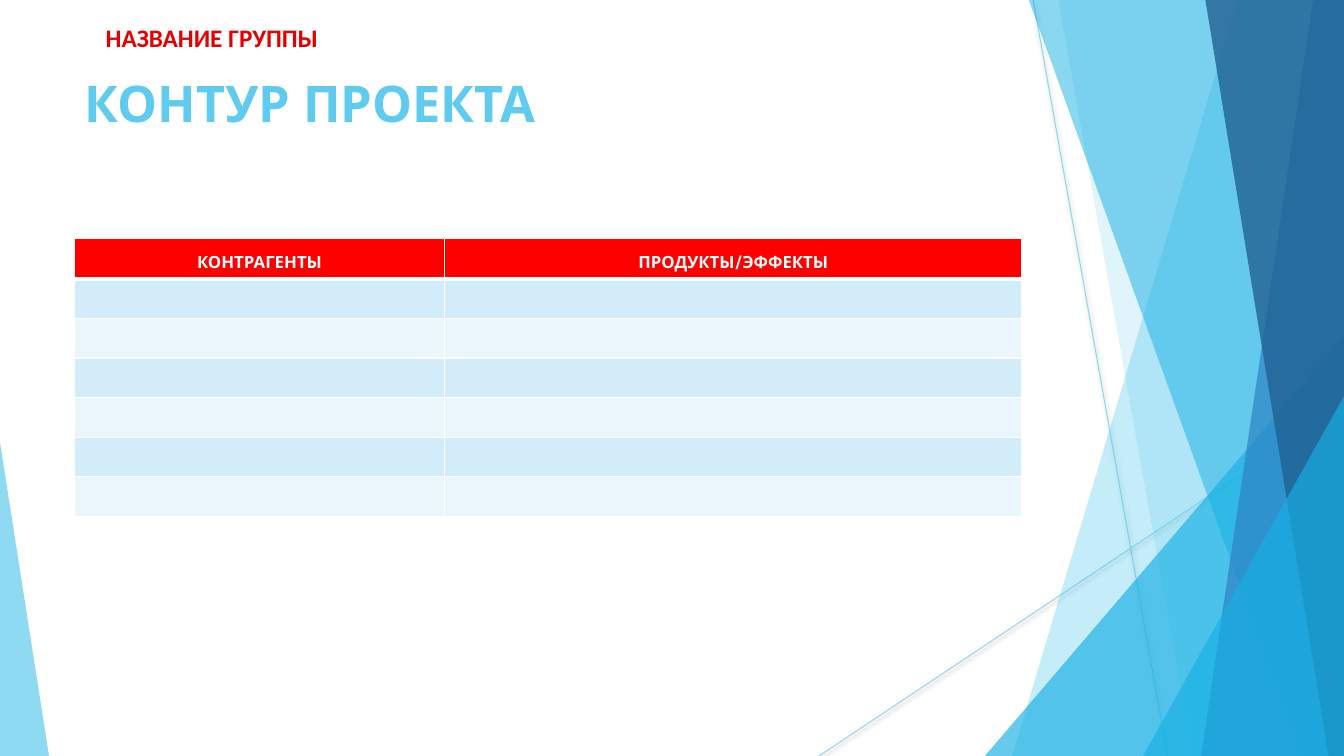
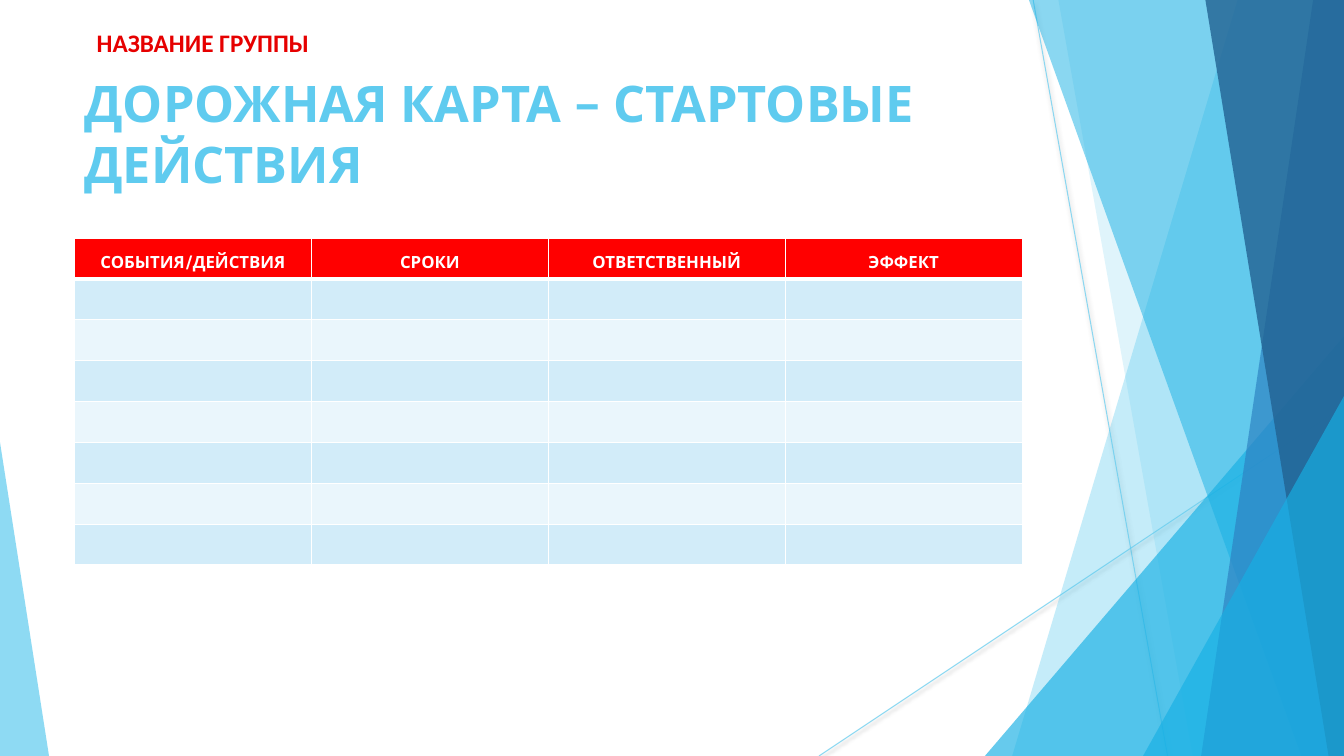
from pptx import Presentation
from pptx.dml.color import RGBColor
from pptx.enum.shapes import MSO_CONNECTOR as Connector, MSO_SHAPE as Preset
from pptx.enum.text import MSO_ANCHOR as Anchor, PP_ALIGN as Align
from pptx.oxml import parse_xml
from pptx.oxml.ns import nsdecls, qn
from pptx.util import Pt

WIDTH, HEIGHT = 960, 540
SKY, CYAN, BLUE, NAVY = "5FCBEF", "17B0E4", "2E83C3", "226292"
WHITE, RED, LABEL_RED = "FFFFFF", "FF0000", "E60000"
STRIPES = ("D2ECF9", "EAF6FC")
TITLE_FONT, LABEL_FONT = "Karla", "Calibri"
LEFT, CONTENT_WIDTH = 53.3, 676.8
TITLE_TOP, TABLE_TOP = 48.2, 170
HEADER_HEIGHT = 29.2


def color(value):
    """Turn a hex string into a colour."""
    return RGBColor.from_string(value)


def set_alpha(shape, percent):
    """Make the colours of a shape translucent."""
    for tint in shape._element.spPr.iter(qn("a:srgbClr")):
        tint.append(parse_xml(f'<a:alpha {nsdecls("a")} val="{percent * 1000}"/>'))


def paint(shape, fill, alpha):
    """Give a shape a translucent fill with no outline or shadow."""
    shape.shadow.inherit = False
    shape.fill.solid()
    shape.fill.fore_color.rgb = color(fill)
    shape.line.fill.background()
    set_alpha(shape, alpha)


def add_ray(page, start, end):
    """Draw a thin line with a soft shadow below it."""
    ray = page.shapes.add_connector(Connector.STRAIGHT, *map(Pt, start + end))
    ray.line.color.rgb = color(SKY)
    ray.line.width = Pt(0.75)
    set_alpha(ray, 70)
    ray._element.spPr.append(parse_xml(
        f'<a:effectLst {nsdecls("a")}><a:outerShdw blurRad="{Pt(3.1)}" dist="{Pt(1.6)}" '
        'dir="5400000" rotWithShape="0"><a:srgbClr val="000000"><a:alpha val="38000"/>'
        '</a:srgbClr></a:outerShdw></a:effectLst>'))


def add_band(page, top_x, bottom_x, fill, alpha):
    """Fill from a slanted edge to the right side of the page."""
    outline = page.shapes.build_freeform(Pt(top_x), Pt(0))
    corners = [(WIDTH, 0), (WIDTH, HEIGHT), (bottom_x, HEIGHT)]
    outline.add_line_segments([(Pt(x), Pt(y)) for x, y in corners], close=True)
    paint(outline.convert_to_shape(), fill, alpha)


def add_wedge(page, left, top, width, apex, fill, alpha):
    """Draw a triangle that stands on the bottom of the page."""
    wedge = page.shapes.add_shape(
        Preset.ISOSCELES_TRIANGLE, Pt(left), Pt(top), Pt(width), Pt(HEIGHT - top))
    wedge.adjustments[0] = apex
    paint(wedge, fill, alpha)


def add_backdrop(page):
    """Draw the facets shared by all pages."""
    add_ray(page, (738, 0), (834, HEIGHT))
    add_ray(page, (WIDTH, 290), (585, HEIGHT))
    add_band(page, 884, 723, SKY, 36)
    add_band(page, 756, 852, SKY, 20)
    add_wedge(page, 703.5, 240, 256.5, 1, CYAN, 66)
    add_band(page, 735, 929.5, CYAN, 50)
    add_band(page, 938, 858, BLUE, 70)
    add_band(page, 861, 949, NAVY, 80)
    add_wedge(page, 816.5, 283, 143.5, 1, CYAN, 66)
    add_wedge(page, 0, 316, 35, 0, SKY, 70)


def add_span(para, text, font, size, tint):
    """Add one bold run to a paragraph."""
    span = para.add_run()
    span.text = text
    span.font.name = font
    span.font.size = Pt(size)
    span.font.bold = True
    span.font.color.rgb = color(tint)


def add_text(page, area, text, font, size, tint, anchor):
    """Add a wrapping text box with one paragraph."""
    box = page.shapes.add_textbox(*map(Pt, area))
    box.text_frame.word_wrap = True
    box.text_frame.vertical_anchor = anchor
    add_span(box.text_frame.paragraphs[0], text, font, size, tint)


def style_cell(cell, fill, top_width, bottom_width):
    """Fill a cell and give it white borders."""
    cell.fill.solid()
    cell.fill.fore_color.rgb = color(fill)
    widths = {"lnL": 1, "lnR": 1, "lnT": top_width, "lnB": bottom_width}
    for index, (side, width) in enumerate(widths.items()):
        cell._tc.get_or_add_tcPr().insert(index, parse_xml(
            f'<a:{side} {nsdecls("a")} w="{Pt(width)}"><a:solidFill>'
            f'<a:srgbClr val="{WHITE}"/></a:solidFill></a:{side}>'))


def add_grid(page, headers, widths, body_rows, row_height):
    """Add a table with a red header and empty striped rows."""
    height = HEADER_HEIGHT + body_rows * row_height
    table = page.shapes.add_table(
        body_rows + 1, len(headers), Pt(LEFT), Pt(TABLE_TOP),
        Pt(CONTENT_WIDTH), Pt(height)).table
    for column, width in zip(table.columns, widths):
        column.width = Pt(width)
    for index, row in enumerate(table.rows):
        row.height = Pt(row_height if index else HEADER_HEIGHT)
        for cell, header in zip(row.cells, headers):
            if index:
                style_cell(cell, STRIPES[(index - 1) % 2], 3 if index == 1 else 1, 1)
                cell.margin_top = cell.margin_bottom = Pt(3)
            else:
                style_cell(cell, RED, 1, 3)
                para = cell.text_frame.paragraphs[0]
                para.alignment = Align.CENTER
                para.line_spacing = 1.5
                add_span(para, header, TITLE_FONT, 12, WHITE)


def add_page(deck, title, label_left, label_top):
    """Add a page with its backdrop, title and group label."""
    page = deck.slides.add_slide(deck.slide_layouts[6])
    add_backdrop(page)
    add_text(page, (LEFT, TITLE_TOP, CONTENT_WIDTH, 103.7), title,
             TITLE_FONT, 36, SKY, Anchor.TOP)
    add_text(page, (label_left, label_top, 515, 28), "НАЗВАНИЕ ГРУППЫ",
             LABEL_FONT, 18, LABEL_RED, Anchor.MIDDLE)
    return page


def main():
    """Build and save the deck."""
    deck = Presentation()
    deck.slide_width, deck.slide_height = Pt(WIDTH), Pt(HEIGHT)

    page = add_page(deck, "КОНТУР ПРОЕКТА", 68.4, 13)
    add_grid(page, ["КОНТРАГЕНТЫ", "ПРОДУКТЫ/ЭФФЕКТЫ"], [264.3, 412.5], 6, 28.3)

    page = add_page(deck, "ДОРОЖНАЯ КАРТА – СТАРТОВЫЕ ДЕЙСТВИЯ", 62, 16)
    headers = ["СОБЫТИЯ/ДЕЙСТВИЯ", "СРОКИ", "ОТВЕТСТВЕННЫЙ", "ЭФФЕКТ"]
    add_grid(page, headers, [CONTENT_WIDTH / len(headers)] * len(headers), 7, 29.2)

    deck.save("out.pptx")


if __name__ == "__main__":
    main()
